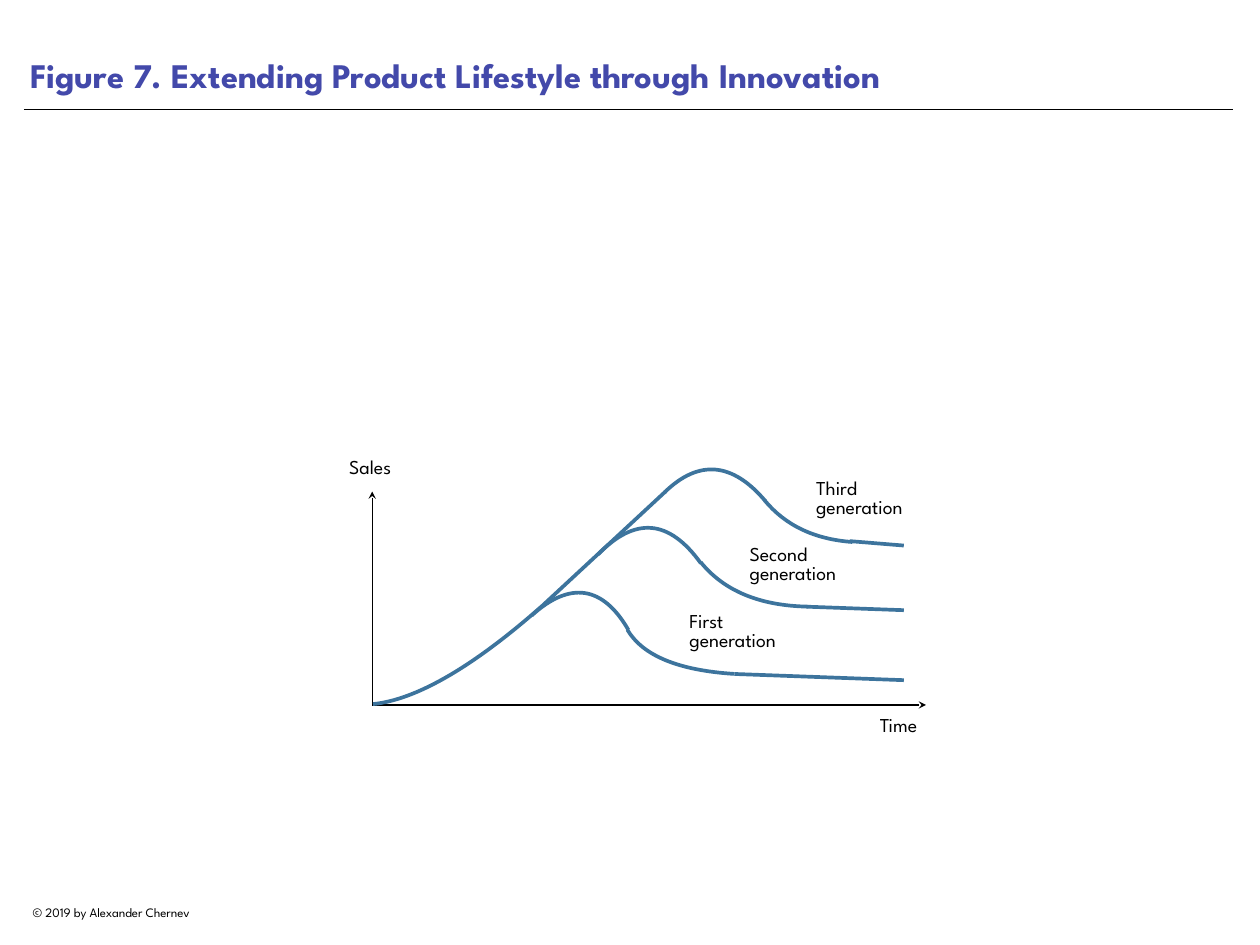
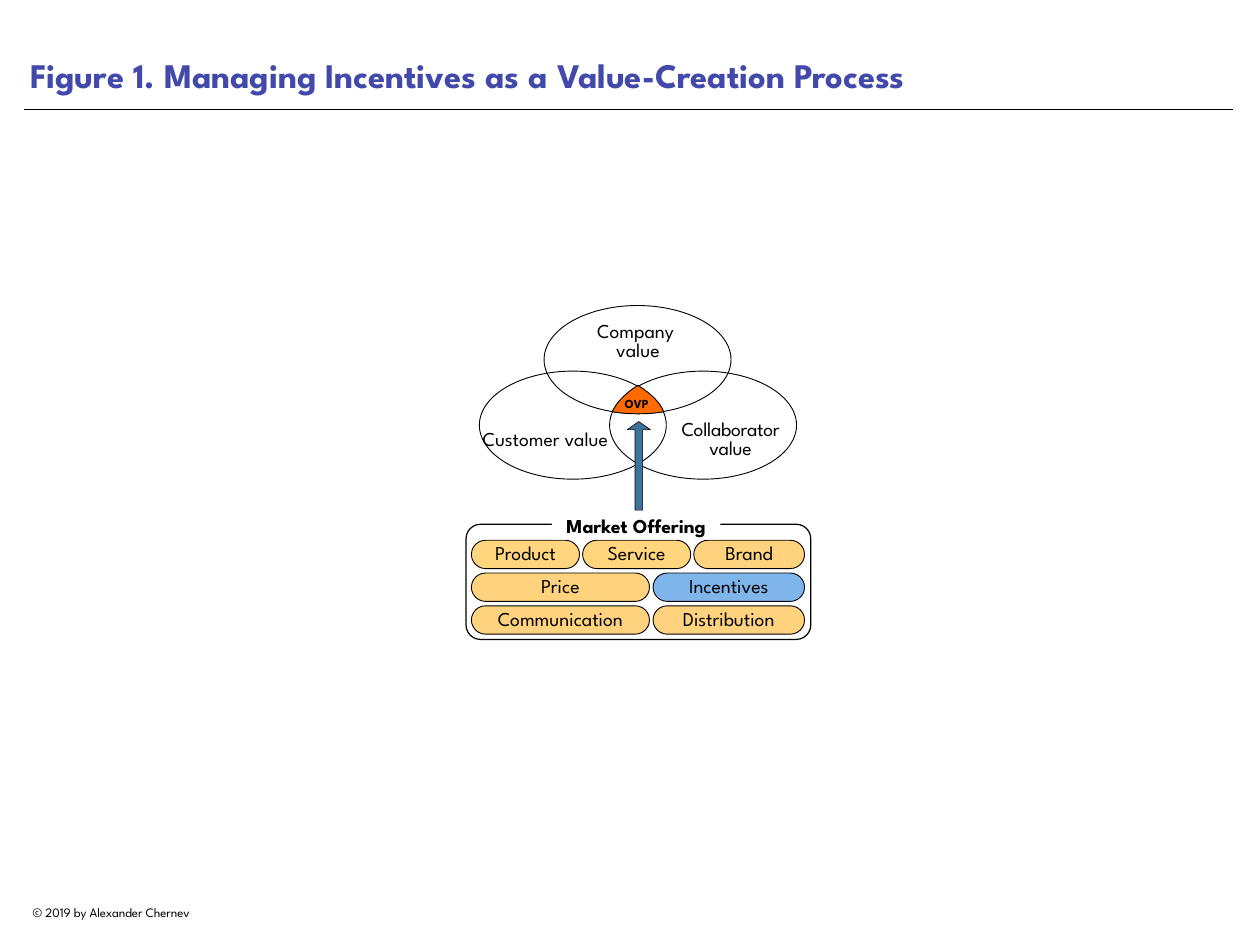
from dataclasses import dataclass
from typing import NamedTuple

from lxml import etree
from pptx import Presentation
from pptx.dml.color import RGBColor
from pptx.enum import shapes, text
from pptx.oxml import ns
from pptx.util import Inches, Pt

FONT = "League Spartan"
BLACK = RGBColor(0x00, 0x00, 0x00)
WHITE = RGBColor(0xFF, 0xFF, 0xFF)
INDIGO = RGBColor(0x43, 0x49, 0xAA)
STEEL = RGBColor(0x3D, 0x74, 0x9D)
AMBER = RGBColor(0xFF, 0xD6, 0x7E)
GOLD = RGBColor(0xFF, 0xD3, 0x7D)
SKY = RGBColor(0x7E, 0xB5, 0xEA)
ORANGE = RGBColor(0xFF, 0x6B, 0x00)

LEFT, CENTER = text.PP_ALIGN.LEFT, text.PP_ALIGN.CENTER
TOP, MIDDLE, BOTTOM = text.MSO_ANCHOR.TOP, text.MSO_ANCHOR.MIDDLE, text.MSO_ANCHOR.BOTTOM
PRESET = shapes.MSO_SHAPE
EXTENT_STEPS = 24


class Box(NamedTuple):
    x: float
    y: float
    w: float
    h: float

    def emu(self) -> list:
        return [Inches(v) for v in self]


class Point(NamedTuple):
    x: float
    y: float


@dataclass(frozen=True)
class Style:
    size: float = 16
    color: RGBColor = BLACK
    bold: bool = False
    align: text.PP_ALIGN = LEFT
    anchor: text.MSO_ANCHOR = TOP
    spacing: float = 0.8
    inset: tuple = (0, 0)
    wrap: bool = True
    tracking: int = 0


TITLE = Style(28, INDIGO, True, anchor=BOTTOM, spacing=1, inset=(0.07, 0.07))
FOOTER = Style(10.5, spacing=1, inset=(0.1, 0.05), wrap=False)
LABEL = Style()
AXIS_TOP = Style(align=CENTER)
AXIS_END = Style(spacing=1, wrap=False)
VALUE = Style(align=CENTER, anchor=MIDDLE)
TIGHT_VALUE = Style(align=CENTER, anchor=MIDDLE, tracking=-20)
PILL = Style(align=CENTER, anchor=BOTTOM)
HEADING = Style(bold=True, align=CENTER, anchor=MIDDLE, spacing=1)
OVP = Style(10, bold=True, anchor=MIDDLE, spacing=1)


@dataclass(frozen=True)
class Generation:
    label: str
    label_at: Point
    curves: list
    tail: tuple


@dataclass(frozen=True)
class Circle:
    label: str
    label_box: Box
    x: float
    y: float
    style: Style = VALUE


@dataclass(frozen=True)
class Pill:
    label: str
    width: float
    fill: RGBColor = GOLD


TRUNK = [(4.21, 7.95), (4.7, 7.9), (5.34, 7.53), (6.12, 6.84)]
TRUNK_END = [(6.12, 6.84), (7.51, 5.55)]

GENERATIONS = [
    Generation("First\ngeneration", Point(7.78, 6.93), [
        [(6, 6.95), (6.43, 6.56), (6.8, 6.61), (7.09, 7.11)],
        [(7.08, 7.11), (7.25, 7.4), (7.65, 7.57), (8.29, 7.61)],
    ], (Point(8.29, 7.61), Point(10.2, 7.68))),
    Generation("Second\ngeneration", Point(8.46, 6.17), [
        [(6.75, 6.26), (7.17, 5.83), (7.55, 5.86), (7.91, 6.36)],
        [(7.91, 6.35), (8.17, 6.67), (8.57, 6.84), (9.12, 6.85)],
    ], (Point(9.1, 6.85), Point(10.2, 6.89))),
    Generation("Third\ngeneration", Point(9.21, 5.43), [
        [(7.5, 5.56), (7.89, 5.18), (8.27, 5.22), (8.64, 5.66)],
        [(8.63, 5.65), (8.86, 5.93), (9.19, 6.09), (9.62, 6.12)],
    ], (Point(9.59, 6.11), Point(10.2, 6.16))),
]

CIRCLES = [
    Circle("Customer value", Box(5.43, 4.58, 1.45, 0.79), 5.41, 4.19),
    Circle("Collaborator value", Box(7.57, 4.63, 1.35, 0.68), 6.88, 4.19, TIGHT_VALUE),
    Circle("Company \vvalue", Box(6.33, 3.57, 1.74, 0.59), 6.14, 3.45),
]

PILL_ROWS = [
    [Pill("Product", 1.22, AMBER), Pill("Service", 1.22, AMBER), Pill("Brand", 1.25)],
    [Pill("Price", 2.01), Pill("Incentives", 1.71, SKY)],
    [Pill("Communication", 2.01), Pill("Distribution", 1.71)],
]
PILL_GRID = Box(5.32, 6.1, 3.76, 0.32)
PILL_PITCH = 0.37


def add_run(p, content: str, style: Style) -> None:
    r = p.add_run()
    r.text = content
    r.font.name = FONT
    r.font.size = Pt(style.size)
    r.font.bold = style.bold
    r.font.color.rgb = style.color
    if style.tracking:
        r.font._element.set("spc", str(style.tracking))


def write(sp, content: str, style: Style) -> None:
    tf = sp.text_frame
    tf.word_wrap = style.wrap
    tf.vertical_anchor = style.anchor
    tf.margin_left = tf.margin_right = Inches(style.inset[0])
    tf.margin_top = tf.margin_bottom = Inches(style.inset[1])
    for i, paragraph in enumerate(content.split("\n")):
        p = tf.add_paragraph() if i else tf.paragraphs[0]
        p.alignment = style.align
        p.line_spacing = style.spacing
        for j, line in enumerate(paragraph.split("\v")):
            if j:
                p.add_line_break()
            add_run(p, line, style)


def add_text(s, box: Box, content: str, style: Style) -> None:
    write(s.shapes.add_textbox(*box.emu()), content, style)


def paint(sp, fill: RGBColor | None, line: RGBColor | None, width: float) -> None:
    sp.shadow.inherit = False
    if fill is None:
        sp.fill.background()
    else:
        sp.fill.solid()
        sp.fill.fore_color.rgb = fill
    if line is None:
        sp.line.fill.background()
    else:
        sp.line.color.rgb = line
        sp.line.width = Pt(width)


def add_shape(s, kind, box: Box, fill: RGBColor | None = None,
              line: RGBColor | None = BLACK, width: float = 0.75, adj: tuple = ()):
    sp = s.shapes.add_shape(kind, *box.emu())
    for i, value in enumerate(adj):
        sp.adjustments[i] = value
    paint(sp, fill, line, width)
    return sp


def add_line(s, start: Point, end: Point, width: float,
             color: RGBColor = BLACK, arrow: str = "") -> None:
    ends = [Inches(v) for v in (*start, *end)]
    cx = s.shapes.add_connector(shapes.MSO_CONNECTOR.STRAIGHT, *ends)
    cx.line.color.rgb = color
    cx.line.width = Pt(width)
    if arrow:
        ln = cx.line._get_or_add_ln()
        etree.SubElement(ln, ns.qn(f"a:{arrow}"), type="stealth")
    etree.SubElement(cx._element.spPr, ns.qn("a:effectLst"))


def bezier(points: list, t: float) -> tuple:
    while len(points) > 1:
        points = [tuple(a + (b - a) * t for a, b in zip(p, q))
                  for p, q in zip(points, points[1:])]
    return points[0]


def add_path(s, points: list, fill: RGBColor | None, line: RGBColor, width: float) -> None:
    emu = [(Inches(x), Inches(y)) for x, y in points]
    degree = min(len(emu) - 1, 3)
    starts = range(0, len(emu) - 1, degree)
    outline = [bezier(emu[i:i + degree + 1], step / EXTENT_STEPS)
               for i in starts for step in range(1, EXTENT_STEPS + 1)]
    fb = s.shapes.build_freeform(*emu[0])
    fb.add_line_segments(outline, close=fill is not None)
    sp = fb.convert_to_shape()
    contour = next(sp._element.iter(ns.qn("a:path")))
    for node in contour.findall(ns.qn("a:lnTo")):
        contour.remove(node)
    tag = ns.qn("a:cubicBezTo" if degree == 3 else "a:lnTo")
    for position, i in enumerate(starts, 1):
        node = etree.Element(tag)
        for x, y in emu[i + 1:i + degree + 1]:
            etree.SubElement(node, ns.qn("a:pt"), x=str(x - sp.left), y=str(y - sp.top))
        contour.insert(position, node)
    paint(sp, fill, line, width)


def add_slide(prs, title: str):
    s = prs.slides.add_slide(prs.slide_layouts[6])
    add_text(s, Box(0.27, 10.16, 2.34, 0.28), "© 2019 by Alexander Chernev", FOOTER)
    add_line(s, Point(0.27, 1.24), Point(13.92, 1.24), 0.5)
    add_text(s, Box(0.27, 0, 13.64, 1.15), title, TITLE)
    return s


def build_lifecycle(prs) -> None:
    s = add_slide(prs, "Figure 7. Extending Product Lifestyle through Innovation")
    origin = Point(4.2, 7.96)
    add_text(s, Box(3.46, 5.19, 1.49, 0.28), "Sales ", AXIS_TOP)
    add_line(s, Point(10.45, origin.y), origin, 1, arrow="headEnd")
    add_line(s, origin, Point(origin.x, 5.55), 1, arrow="tailEnd")
    add_text(s, Box(9.93, 8.05, 0.51, 0.28), "Time", AXIS_END)
    add_path(s, TRUNK, None, STEEL, 3)
    for g in GENERATIONS:
        for curve in g.curves:
            add_path(s, curve, None, STEEL, 3)
        add_line(s, *g.tail, 3, STEEL)
    add_path(s, TRUNK_END, None, STEEL, 3)
    for g in reversed(GENERATIONS):
        add_text(s, Box(*g.label_at, 1.49, 0.5), g.label, LABEL)


def build_incentives(prs) -> None:
    s = add_slide(prs, "Figure 1. Managing Incentives as a Value-Creation Process")
    for c in CIRCLES:
        add_text(s, c.label_box, c.label, c.style)
        add_shape(s, PRESET.OVAL, Box(c.x, c.y, 2.11, 1.22))
    overlap = [
        (6.91, 4.65), (6.96, 4.54), (7.06, 4.44),
        (7.2, 4.35), (7.34, 4.44), (7.45, 4.54),
        (7.49, 4.65), (7.31, 4.68), (7.1, 4.68), (6.91, 4.65),
    ]
    add_path(s, overlap, ORANGE, BLACK, 0.75)
    add_text(s, Box(7.05, 4.46, 0.46, 0.2), "OVP", OVP)

    add_shape(s, PRESET.ROUNDED_RECTANGLE, Box(5.26, 5.92, 3.89, 1.3), width=1, adj=(0.125,))
    for i, row in enumerate(PILL_ROWS):
        gap = (PILL_GRID.w - sum(pill.width for pill in row)) / (len(row) - 1)
        x = PILL_GRID.x
        for pill in row:
            box = Box(x, PILL_GRID.y + i * PILL_PITCH, pill.width, PILL_GRID.h)
            sp = add_shape(s, PRESET.ROUNDED_RECTANGLE, box, pill.fill, adj=(0.5,))
            write(sp, pill.label, PILL)
            x += pill.width + gap
    heading = add_shape(s, PRESET.RECTANGLE, Box(6.23, 5.77, 1.9, 0.32), WHITE, None)
    write(heading, "Market Offering", HEADING)
    arrow = add_shape(s, PRESET.RIGHT_ARROW, Box(6.71, 5.13, 1, 0.26), STEEL,
                      width=0.5, adj=(0.33, 0.35))
    arrow.rotation = 270


def main() -> None:
    prs = Presentation()
    prs.slide_width, prs.slide_height = Inches(14.22), Inches(10.67)
    build_lifecycle(prs)
    build_incentives(prs)
    prs.save("out.pptx")


if __name__ == "__main__":
    main()
